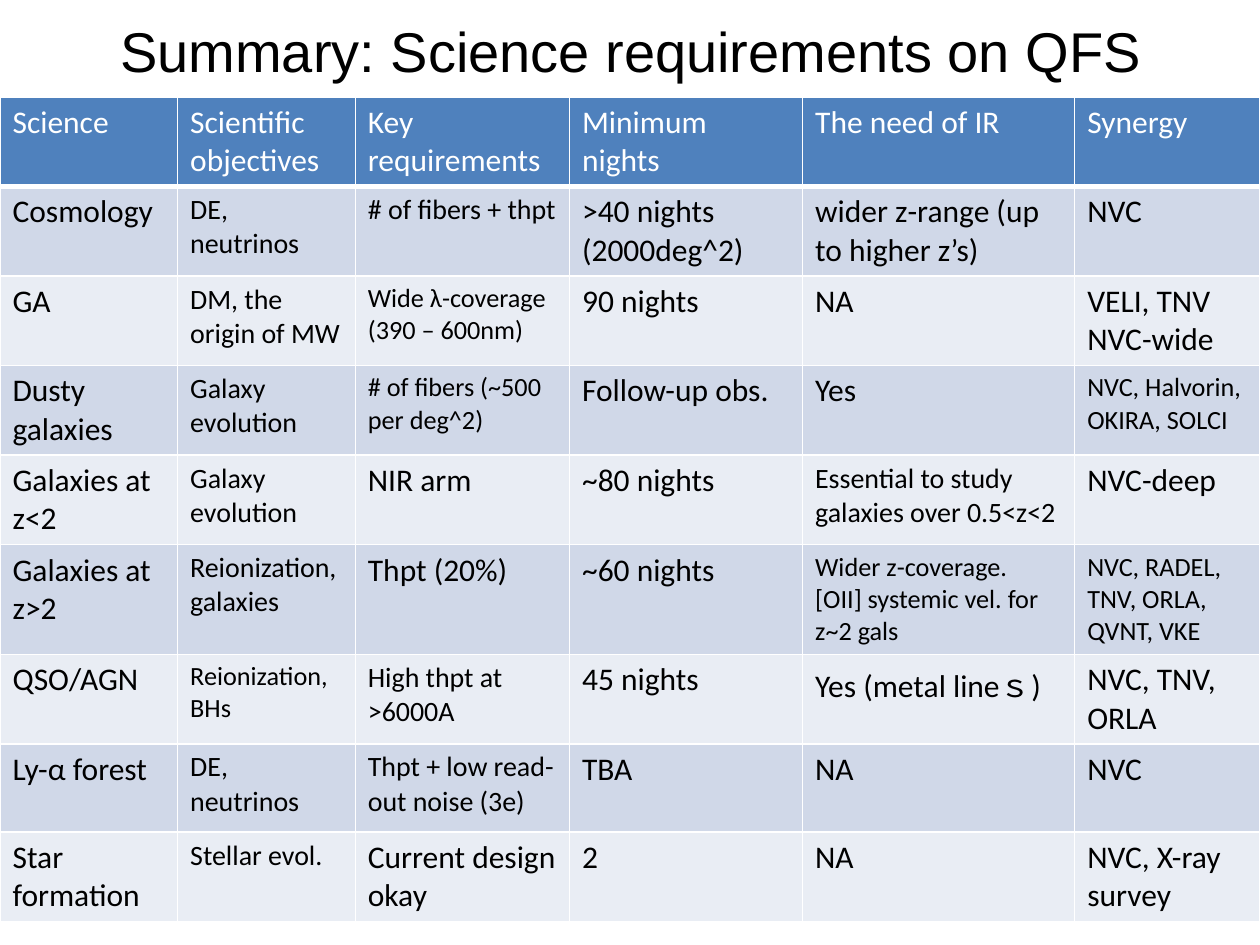
"""Build a slide that tabulates the science requirements on a spectrograph."""
from dataclasses import dataclass

from lxml import etree
from pptx import Presentation
from pptx.dml.color import RGBColor
from pptx.enum.text import MSO_ANCHOR, PP_ALIGN
from pptx.oxml.ns import qn
from pptx.slide import Slide
from pptx.table import _Cell
from pptx.text.text import _Paragraph
from pptx.util import Inches, Pt

CENTER = PP_ALIGN.CENTER
MIDDLE = MSO_ANCHOR.MIDDLE
TITLE_ONLY = 5


@dataclass(frozen=True)
class Theme:
    """Hold the fonts, type sizes and colours of the slide."""
    title_font: str = "Arial"
    table_font: str = "Calibri"
    title_size: int = 32
    normal: int = 18
    small: int = 16
    tiny: int = 15
    text: str = "000000"
    header_text: str = "FFFFFF"
    header_fill: str = "4F81BD"
    bands: tuple[str, str] = ("D0D8E8", "E9EDF4")
    border: str = "FFFFFF"
    border_width: int = 1
    header_border_width: int = 3


THEME = Theme()


@dataclass(frozen=True)
class Entry:
    """Hold the paragraphs of a table cell and their type size."""
    paragraphs: tuple[str, ...]
    size: int = THEME.normal


def normal(*paragraphs: str) -> Entry:
    """Make an entry in the normal size."""
    return Entry(paragraphs)


def small(*paragraphs: str) -> Entry:
    """Make an entry in the small size."""
    return Entry(paragraphs, THEME.small)


def tiny(*paragraphs: str) -> Entry:
    """Make an entry in the smallest size."""
    return Entry(paragraphs, THEME.tiny)


TITLE = "Summary: Science requirements on QFS"
COLUMN_WIDTHS = (1.41, 1.41, 1.7, 1.85, 2.16, 1.47)
ROW_HEIGHT = 0.7
TALL_ROW_HEIGHT = 0.87
TALL_ROW = 5
ROWS = (
    (normal("Science"), normal("Scientific objectives"), normal("Key requirements"),
     normal("Minimum nights"), normal("The need of IR"), normal("Synergy")),
    (normal("Cosmology"), small("DE, neutrinos"), small("# of fibers + thpt"),
     normal(">40 nights (2000deg^2)"), normal("wider z-range (up to higher z’s)"),
     normal("NVC")),
    (normal("GA"), small("DM, the origin of MW"),
     tiny("Wide λ-coverage", "(390 – 600nm)"), normal("90 nights"), normal("NA"),
     normal("VELI, TNV", "NVC-wide")),
    (normal("Dusty galaxies"), small("Galaxy evolution"),
     tiny("# of fibers (~500 per deg^2)"), normal("Follow-up obs."), normal("Yes"),
     tiny("NVC, Halvorin, OKIRA, SOLCI")),
    (normal("Galaxies at z<2"), small("Galaxy evolution"), normal("NIR arm"),
     normal("~80 nights"), small("Essential to study galaxies over 0.5<z<2"),
     normal("NVC-deep")),
    (normal("Galaxies at z>2"), small("Reionization, galaxies"), normal("Thpt (20%)"),
     normal("~60 nights"),
     tiny("Wider z-coverage.", "[OII] systemic vel. for z~2 gals"),
     tiny("NVC, RADEL, TNV, ORLA, QVNT, VKE")),
    (normal("QSO/AGN"), tiny("Reionization, BHs"), small("High thpt at >6000A"),
     normal("45 nights"), normal("Yes (metal lineｓ)"), normal("NVC, TNV, ORLA")),
    (normal("Ly-α forest"), small("DE, neutrinos"),
     small("Thpt + low read-out noise (3e)"), normal("TBA"), normal("NA"),
     normal("NVC")),
    (normal("Star formation"), small("Stellar evol."), normal("Current design okay"),
     normal("2"), normal("NA"), normal("NVC, X-ray survey")),
)


def add_run(paragraph: _Paragraph, text: str, font: str, size: int, color: str) -> None:
    """Add one formatted run to a paragraph."""
    run = paragraph.add_run()
    run.text = text
    run.font.name = font
    run.font.size = Pt(size)
    run.font.bold = False
    run.font.color.rgb = RGBColor.from_string(color)


def add_title(slide: Slide) -> None:
    """Place and fill the title placeholder."""
    title = slide.shapes.title
    title.left, title.top = Inches(0.51), Inches(0.18)
    title.width, title.height = Inches(9), Inches(0.44)
    title.text_frame.vertical_anchor = MIDDLE
    paragraph = title.text_frame.paragraphs[0]
    paragraph.alignment = CENTER
    add_run(paragraph, TITLE, THEME.title_font, THEME.title_size, THEME.text)


def set_header_borders(cell: _Cell) -> None:
    """Draw the four borders of a header cell."""
    properties = cell._tc.get_or_add_tcPr()
    for side in ("L", "R", "T", "B"):
        width = THEME.header_border_width if side == "B" else THEME.border_width
        line = etree.SubElement(properties, qn(f"a:ln{side}"), w=str(Pt(width)))
        fill = etree.SubElement(line, qn("a:solidFill"))
        etree.SubElement(fill, qn("a:srgbClr"), val=THEME.border)


def fill_cell(cell: _Cell, entry: Entry, row_index: int) -> None:
    """Format a cell by its row and write its entry."""
    fill_color, text_color = THEME.bands[(row_index - 1) % 2], THEME.text
    if row_index == 0:
        set_header_borders(cell)
        fill_color, text_color = THEME.header_fill, THEME.header_text
    cell.fill.solid()
    cell.fill.fore_color.rgb = RGBColor.from_string(fill_color)
    frame = cell.text_frame
    for index, text in enumerate(entry.paragraphs):
        paragraph = frame.add_paragraph() if index else frame.paragraphs[0]
        add_run(paragraph, text, THEME.table_font, entry.size, text_color)


def add_requirements_table(slide: Slide) -> None:
    """Add the table of requirements across the slide."""
    height = ROW_HEIGHT * (len(ROWS) - 1) + TALL_ROW_HEIGHT
    table = slide.shapes.add_table(
        len(ROWS), len(COLUMN_WIDTHS), Inches(0), Inches(0.77),
        Inches(sum(COLUMN_WIDTHS)), Inches(height),
    ).table
    for column, width in zip(table.columns, COLUMN_WIDTHS):
        column.width = Inches(width)
    for row_index, entries in enumerate(ROWS):
        row = table.rows[row_index]
        row.height = Inches(TALL_ROW_HEIGHT if row_index == TALL_ROW else ROW_HEIGHT)
        for cell, entry in zip(row.cells, entries):
            fill_cell(cell, entry, row_index)


def main() -> None:
    """Build and save the presentation."""
    presentation = Presentation()
    presentation.slide_width = Inches(10)
    presentation.slide_height = Inches(7.5)
    slide = presentation.slides.add_slide(presentation.slide_layouts[TITLE_ONLY])
    add_title(slide)
    add_requirements_table(slide)
    presentation.save("out.pptx")


if __name__ == "__main__":
    main()
